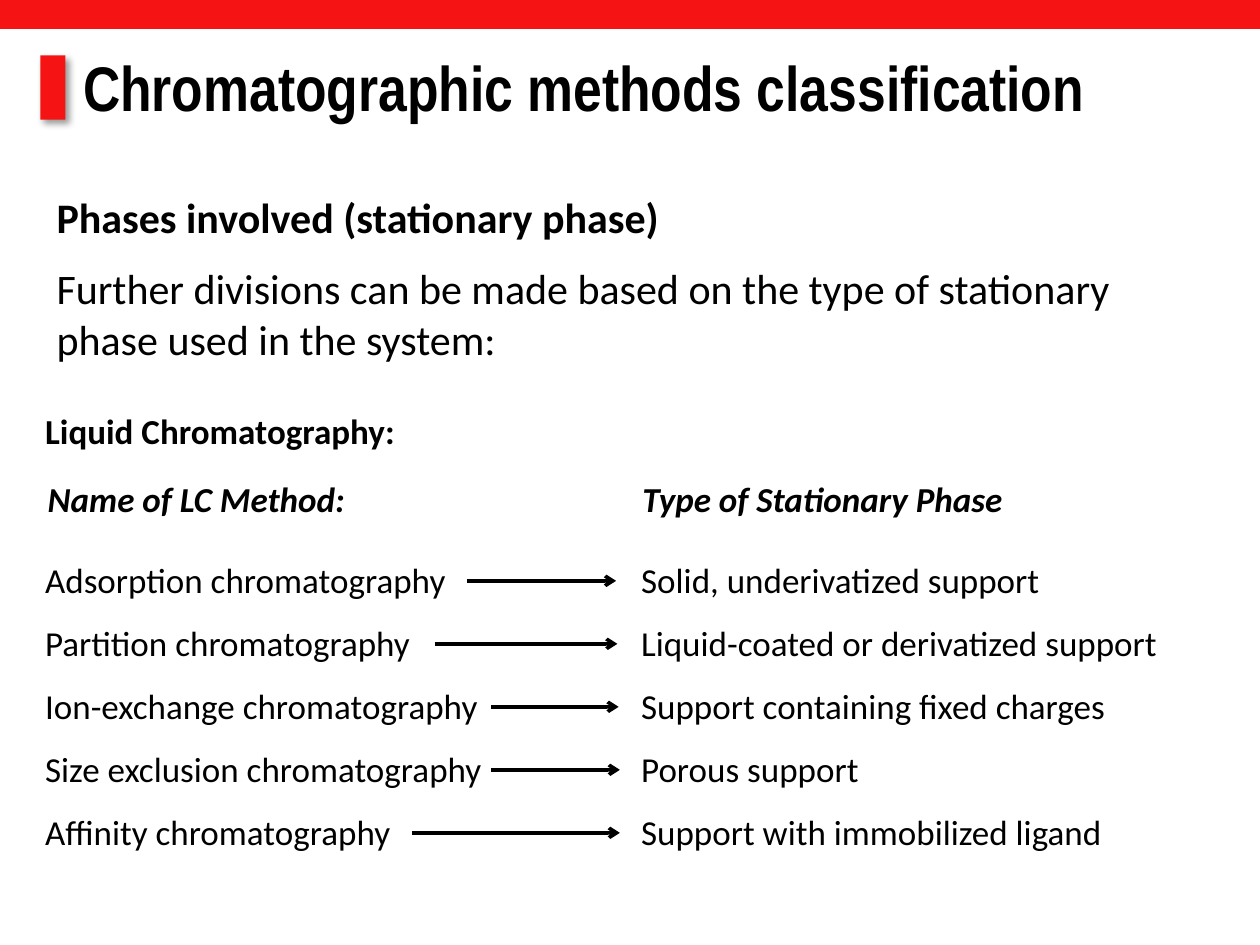
from typing import NamedTuple

from lxml import etree
from pptx import Presentation
from pptx.dml.color import RGBColor
from pptx.enum.shapes import MSO_CONNECTOR, MSO_SHAPE
from pptx.enum.text import MSO_ANCHOR, PP_ALIGN
from pptx.oxml import parse_xml
from pptx.oxml.ns import nsdecls, qn
from pptx.util import Inches, Pt

RED = RGBColor(0xF5, 0x13, 0x13)
BLACK = RGBColor(0, 0, 0)
UNIT = Inches(0.1)  # the slide is a grid of 100 columns by 75 rows
ROW_PITCH = 5

# method, stationary phase, arrow start and arrow end in columns of the table
METHODS = [
    ("Adsorption chromatography", "Solid, underivatized support", 34.5, 46.3),
    ("Partition chromatography", "Liquid-coated or derivatized support", 31.9, 46.4),
    ("Ion-exchange chromatography", "Support containing fixed charges", 36.4, 46.5),
    ("Size exclusion chromatography", "Porous support", 36.4, 46.6),
    ("Affinity chromatography", "Support with immobilized ligand", 30.1, 46.6),
]


class Box(NamedTuple):
    """A region measured in grid columns and rows."""
    left: float
    top: float
    width: float
    height: float

    def region(self, left, top, width, height):
        return Box(self.left + left, self.top + top, width, height)

    def lengths(self):
        return [round(value * UNIT) for value in self]


def format_para(para, size, font="Calibri", bold=False, italic=False):
    for span in para.runs:
        span.font.name = font
        span.font.size = Pt(size)
        span.font.bold = bold
        span.font.italic = italic
        span.font.color.rgb = BLACK


def add_text(page, box, lines, size, **style):
    """Add a wrapped text box with one paragraph per line, and return its paragraphs."""
    frame = page.shapes.add_textbox(*box.lengths()).text_frame
    frame.word_wrap = True
    frame.text = "\n".join(lines)
    for index, para in enumerate(frame.paragraphs):
        if index:
            para.space_before = Pt(12)
        format_para(para, size, **style)
    return frame.paragraphs


def add_red_block(page, box):
    block = page.shapes.add_shape(MSO_SHAPE.RECTANGLE, *box.lengths())
    block.shadow.inherit = False
    block.fill.solid()
    block.fill.fore_color.rgb = RED
    block.line.fill.background()
    return block


def add_arrow(page, start, end, row):
    ends = [round(value * UNIT) for value in (start, row, end, row)]
    arrow = page.shapes.add_connector(MSO_CONNECTOR.STRAIGHT, *ends)
    arrow.line.color.rgb = BLACK
    arrow.line.width = Pt(2)
    properties = arrow._element.spPr
    etree.SubElement(properties.find(qn("a:ln")), qn("a:tailEnd"), type="arrow")
    etree.SubElement(properties, qn("a:effectLst"))


def add_header(page, box):
    """Place the top band, the shadowed marker and the title."""
    marker = add_red_block(page, box.region(3.2, 4.4, 2, 5.1))
    marker._element.spPr.find(qn("a:effectLst")).append(parse_xml(
        f'<a:outerShdw {nsdecls("a")} blurRad="{Pt(4)}" dist="{Pt(3)}" dir="2700000">'
        '<a:srgbClr val="000000"><a:alpha val="40000"/></a:srgbClr></a:outerShdw>'))
    add_red_block(page, box.region(0, 0, box.width, 2.3))

    title = page.shapes.title
    title.left, title.top, title.width, title.height = box.region(5.6, 3.3, 91, 7.1).lengths()
    frame = title.text_frame
    frame.text = "Chromatographic methods classification"
    frame.vertical_anchor = MSO_ANCHOR.MIDDLE
    frame.paragraphs[0].alignment = PP_ALIGN.LEFT
    format_para(frame.paragraphs[0], 36, "Arial Narrow", bold=True)


def add_introduction(page, box):
    heading, body = add_text(page, box, [
        "Phases involved (stationary phase)",
        "Further divisions can be made based on the type of stationary phase used in the system:",
    ], 24)
    heading.runs[0].font.bold = True


def add_methods(page, box):
    """Place the two headed columns and the arrows that join their rows."""
    names, phases, starts, ends = zip(*METHODS)
    add_text(page, box.region(0, 11.8, 50, 24.6), names, 20)
    add_text(page, box.region(47.3, 11.8, 43.4, 24.6), phases, 20)
    add_text(page, box.region(0, 0, 31.8, 4.4), ["Liquid Chromatography:"], 20, bold=True)
    for left, heading in ((0.2, "Name of LC Method:"), (47.4, "Type of Stationary Phase")):
        add_text(page, box.region(left, 5.4, 31.8, 4.4), [heading], 20, bold=True, italic=True)
    for index, (start, end) in enumerate(zip(starts, ends)):
        add_arrow(page, box.left + start, box.left + end, box.top + 14.1 + index * ROW_PITCH)


def main():
    deck = Presentation()
    deck.slide_width, deck.slide_height = 100 * UNIT, 75 * UNIT
    page = deck.slides.add_slide(deck.slide_layouts[5])
    add_header(page, Box(0, 0, 100, 11))
    add_introduction(page, Box(3.5, 14.7, 91.5, 15.7))
    add_methods(page, Box(2.6, 32, 91, 36.4))
    deck.save("out.pptx")


if __name__ == "__main__":
    main()
